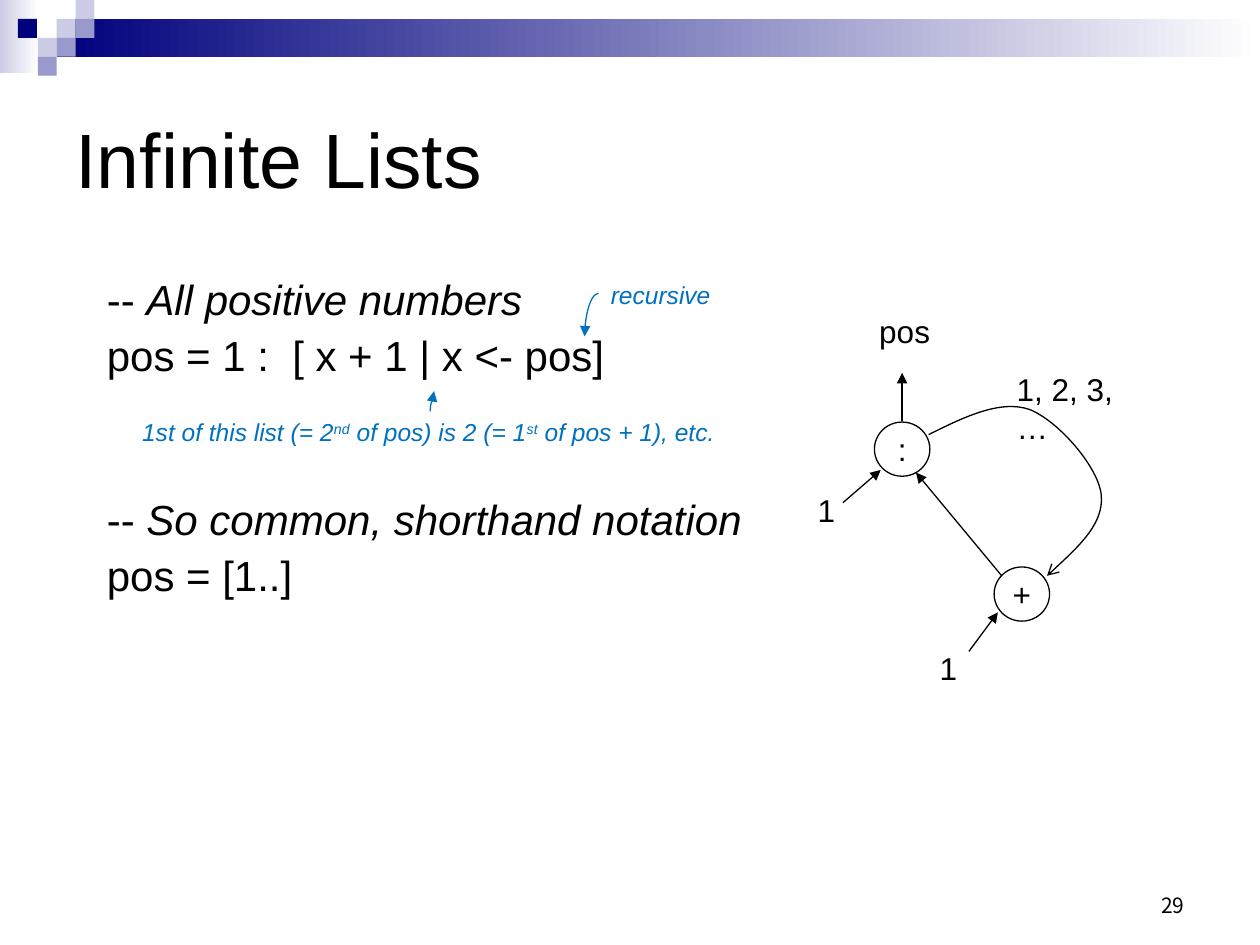
import dataclasses

import lxml.etree
import pptx
import pptx.dml.color
import pptx.enum.shapes
import pptx.enum.text
import pptx.oxml.ns
import pptx.util

SHAPES = pptx.enum.shapes.MSO_SHAPE
CONNECTORS = pptx.enum.shapes.MSO_CONNECTOR
ANCHORS = pptx.enum.text.MSO_ANCHOR
ALIGNS = pptx.enum.text.PP_ALIGN
qn = pptx.oxml.ns.qn


@dataclasses.dataclass(frozen=True)
class Theme:
    """Colours, fonts and sizes of the deck."""
    ink: str = "000000"
    note: str = "0070C0"
    navy: str = "00007D"
    mid: str = "9999CC"
    pale: str = "CCCCE6"
    paper: str = "FFFFFF"
    font: str = "Arial"
    number_font: str = "Noto Sans CJK KR"
    title: int = 44
    body: int = 24
    label: int = 18
    remark: int = 14
    number: int = 12
    line: float = 0.75


THEME = Theme()
COLUMNS, ROWS = 100, 75
UNIT = pptx.util.Inches(10) // COLUMNS


@dataclasses.dataclass(frozen=True)
class Box:
    """A region of the slide, measured in grid columns and rows."""
    left: float
    top: float
    width: float
    height: float

    def inner(self, left, top, width, height):
        """Return a box placed relative to this one."""
        return Box(self.left + left, self.top + top, width, height)

    def point(self, column, row):
        """Return a point of this box in slide units."""
        return round((self.left + column) * UNIT), round((self.top + row) * UNIT)

    def frame(self):
        """Return left, top, width and height in slide units."""
        return [round(n * UNIT) for n in (self.left, self.top, self.width, self.height)]


def rgb(colour):
    """Turn a hex string into a colour."""
    return pptx.dml.color.RGBColor.from_string(colour)


def write(para, spans, size, colour=THEME.ink, font=THEME.font):
    """Fill a paragraph with (text, italic, superscript) spans."""
    for text, italic, raised in spans:
        span = para.add_run()
        span.text = text
        span.font.size = pptx.util.Pt(size)
        span.font.name = font
        span.font.italic = italic
        span.font.color.rgb = rgb(colour)
        if raised:
            span.font._element.set("baseline", "30000")


def add_text(page, box, spans, size, colour=THEME.ink, font=THEME.font, wrap=False):
    """Add a one-paragraph text box and return it."""
    shape = page.shapes.add_textbox(*box.frame())
    shape.text_frame.word_wrap = wrap
    write(shape.text_frame.paragraphs[0], spans, size, colour, font)
    return shape


def add_block(page, box, *colours):
    """Add a borderless rectangle, with a gradient if given two colours."""
    block = page.shapes.add_shape(SHAPES.RECTANGLE, *box.frame())
    block.shadow.inherit = False
    block.line.fill.background()
    if len(colours) == 1:
        block.fill.solid()
        block.fill.fore_color.rgb = rgb(colours[0])
        return
    block.fill.gradient()
    block.fill.gradient_angle = 0
    for stop, colour in zip(block.fill.gradient_stops, colours):
        stop.color.rgb = rgb(colour)


def style_line(shape, colour=THEME.ink, head=None):
    """Set the outline of a shape and its end arrowhead."""
    shape.line.color.rgb = rgb(colour)
    shape.line.width = pptx.util.Pt(THEME.line)
    if head:
        lxml.etree.SubElement(shape.line._get_or_add_ln(), qn("a:tailEnd"), type=head)


def add_arrow(page, box, start, end, kind=CONNECTORS.STRAIGHT, colour=THEME.ink):
    """Add an arrow between two points of a box and return its properties."""
    arrow = page.shapes.add_connector(kind, *box.point(*start), *box.point(*end))
    style_line(arrow, colour, "triangle")
    properties = arrow._element.spPr
    lxml.etree.SubElement(properties, qn("a:effectLst"))
    return properties


def add_curve(page, box, points):
    """Add an open Bezier curve with an arrowhead through a list of points."""
    places = [box.point(*point) for point in points]
    builder = page.shapes.build_freeform(*places[0], scale=1.0)
    builder.add_line_segments(places[1:], close=False)
    curve = builder.convert_to_shape()
    curve.shadow.inherit = False
    curve.fill.background()
    style_line(curve, head="arrow")
    outline = curve._element.find(".//" + qn("a:path"))
    steps = outline.findall(qn("a:lnTo"))
    for first in range(0, len(steps), 3):
        bend = lxml.etree.SubElement(outline, qn("a:cubicBezTo"))
        for step in steps[first:first + 3]:
            bend.append(step[0])
            outline.remove(step)


def add_node(page, box, text):
    """Add a round node with a centred label."""
    node = page.shapes.add_shape(SHAPES.OVAL, *box.frame())
    node.shadow.inherit = False
    node.fill.background()
    style_line(node)
    frame = node.text_frame
    frame.margin_left = frame.margin_right = frame.margin_top = frame.margin_bottom = 0
    frame.word_wrap = False
    frame.vertical_anchor = ANCHORS.MIDDLE
    frame.paragraphs[0].alignment = ALIGNS.CENTER
    write(frame.paragraphs[0], [(text, False, False)], THEME.label)


def draw_banner(page, box):
    """Draw the gradient band and its checker of small squares."""
    side = 1.5
    add_block(page, box.inner(0, 0, 3.1, 5.8), THEME.pale, THEME.paper)
    add_block(page, box.inner(3 * side, side, box.width - 3 * side, 2 * side),
              THEME.navy, THEME.paper)
    squares = [(3, 1, THEME.pale), (4, 0, THEME.pale), (4, 1, THEME.mid),
               (2, 2, THEME.pale), (0.95, 1, THEME.navy), (3, 2, THEME.mid),
               (2, 3, THEME.mid)]
    for column, row, colour in squares:
        add_block(page, box.inner(column * side, row * side, side, side), colour)


def draw_title(page, box, text):
    """Place and format the title placeholder."""
    title = page.shapes.title
    title.left, title.top, title.width, title.height = box.frame()
    title.text_frame.vertical_anchor = ANCHORS.MIDDLE
    para = title.text_frame.paragraphs[0]
    para.alignment = ALIGNS.LEFT
    write(para, [(text, False, False)], THEME.title)


def draw_code(page, box):
    """Write the code lines and their annotations."""
    lines = [(6, [("-- ", False, False), ("All positive numbers", True, False)]),
             (6, [("pos = 1 :  [ x + 1 | x <- pos]", False, False)]),
             (67.5, [("-- ", False, False), ("So common, shorthand notation", True, False)]),
             (6, [("pos = [1..]", False, False)])]
    frame = page.shapes.add_textbox(*box.frame()).text_frame
    frame.word_wrap = True
    for index, (gap, spans) in enumerate(lines):
        para = frame.add_paragraph() if index else frame.paragraphs[0]
        para.line_spacing = 0.9
        para.space_before = pptx.util.Pt(gap)
        write(para, spans, THEME.body)

    add_text(page, box.inner(40, 0, 10, 3.4), [("recursive", True, False)],
             THEME.remark, THEME.note)
    bend = add_arrow(page, box, (40, 1.6), (38.9, 5), CONNECTORS.CURVE, THEME.note)
    bend.find(qn("a:prstGeom")).set("prst", "curvedConnector2")
    remark = [("1st of this list (= 2", True, False), ("nd", True, True),
              (" of pos) is 2 (= 1", True, False), ("st", True, True),
              (" of pos + 1), etc.", True, False)]
    add_text(page, box.inner(2.8, 10.9, 47.7, 3.4), remark,
             THEME.remark, THEME.note, wrap=True)
    turn = add_arrow(page, box, (27.6, 10.3), (26, 10), CONNECTORS.CURVE, THEME.note)
    turn.find(qn("a:xfrm")).set("rot", str(90 * 60000))


def draw_network(page, box):
    """Draw the data-flow network that produces the list."""
    for column, row, text in [(9.4, 9.5, ":"), (18.9, 21, "+")]:
        add_node(page, box.inner(column, row, 4.4, 4.3), text)
    for start, end in [((6.9, 15.9), (9.9, 13.3)), ((11.6, 9.4), (11.6, 5.6)),
                       ((16.9, 27.7), (19.2, 24.6)), ((19.5, 21.7), (12.7, 13.5))]:
        add_arrow(page, box, start, end)
    add_curve(page, box, [(13.7, 10.5), (16.5, 9.1), (19.4, 7.7), (21.7, 8.5),
                          (24, 9.4), (27.2, 13.1), (27.4, 15.3),
                          (27.6, 17.5), (25.4, 19.6), (23.1, 21.7)])
    for column, row, width, text in [(3.9, 14.5, 3.4, "1"), (13.6, 27, 3.4, "1"),
                                     (19.7, 4.9, 12.8, "1, 2, 3, …"), (8.8, 0.3, 6, "pos")]:
        add_text(page, box.inner(column, row, width, 4), [(text, False, False)], THEME.label)


def draw_number(page, box, text):
    """Write the slide number at the bottom right of its box."""
    shape = add_text(page, box, [(text, False, False)], THEME.number,
                     font=THEME.number_font, wrap=True)
    shape.text_frame.vertical_anchor = ANCHORS.BOTTOM
    shape.text_frame.paragraphs[0].alignment = ALIGNS.RIGHT


def main():
    """Build the deck and save it."""
    deck = pptx.Presentation()
    deck.slide_width, deck.slide_height = COLUMNS * UNIT, ROWS * UNIT
    page = deck.slides.add_slide(deck.slide_layouts.get_by_name("Title Only"))
    draw_banner(page, Box(0, 0, COLUMNS, 6))
    draw_title(page, Box(5, 5, 90, 15), "Infinite Lists")
    draw_code(page, Box(7.5, 21.7, 53.4, 32.6))
    draw_network(page, Box(60, 24, 40, 32))
    draw_number(page, Box(71.7, 68.3, 23.3, 5), "29")
    deck.save("out.pptx")


if __name__ == "__main__":
    main()
